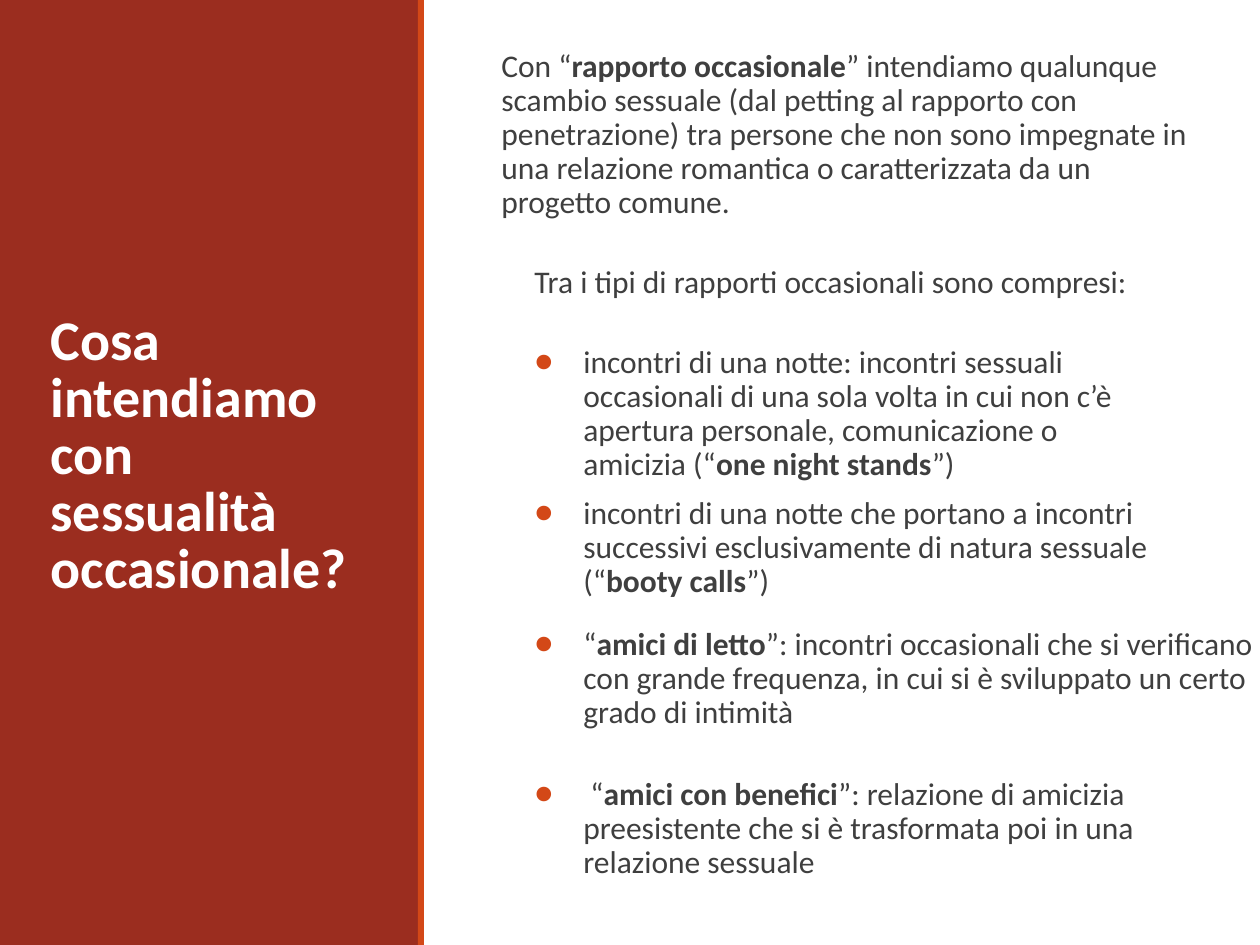
from dataclasses import dataclass

import pptx
import pptx.dml.color
import pptx.enum.shapes
import pptx.enum.text
import pptx.oxml
import pptx.oxml.ns
import pptx.util

PX = 914400 // 126
FONT = "Calibri"
COLORS = {"background": "FFFFFF", "panel": "9B2D1F", "accent": "D34817",
          "text": "3F3F3F", "title": "FFFFFF"}
INDENT, BULLET_INDENT, HANGING = 14, 63, 49
LINE_HEIGHT, INSET = 34, 6


@dataclass
class Bar:
    left: int
    width: int
    color: str


@dataclass
class TextBlock:
    """One paragraph; bold marks the position of the bold run."""
    left: int
    top: int
    width: int
    lines: int
    runs: list[str]
    bold: int | None = 1
    bullet: bool = True


BARS = [Bar(0, 1260, "background"), Bar(0, 418, "panel"), Bar(418, 6, "accent")]

BLOCKS = [
    TextBlock(475, 44, 727, 5, [
        "Con “", "rapporto occasionale",
        "” intendiamo qualunque scambio sessuale (dal petting al rapporto con "
        "penetrazione) tra persone che non sono impegnate in una relazione "
        "romantica o caratterizzata da un progetto comune."], bullet=False),
    TextBlock(508, 260, 689, 1, [
        "Tra i tipi di rapporti occasionali sono compresi:"], bold=None, bullet=False),
    TextBlock(508, 340, 663, 4, [
        "incontri di una notte: incontri sessuali occasionali di una sola volta in "
        "cui non c’è apertura personale, comunicazione o amicizia (“",
        "one night stands", "”)"]),
    TextBlock(508, 491, 663, 3, [
        "incontri di una notte che portano a incontri successivi esclusivamente "
        "di natura sessuale (“", "booty calls", "”)"]),
    TextBlock(508, 622, 779, 3, [
        "“", "amici di letto",
        "”: incontri occasionali che si verificano con grande frequenza, in cui si "
        "è sviluppato un certo grado di intimità"]),
    TextBlock(508, 772, 736, 3, [
        " “", "amici con benefici",
        "”: relazione di amicizia preesistente che si è trasformata poi in una "
        "relazione sessuale"]),
]


def px(n: int) -> pptx.util.Emu:
    return pptx.util.Emu(n * PX)


def rgb(name: str) -> pptx.dml.color.RGBColor:
    return pptx.dml.color.RGBColor.from_string(COLORS[name])


def add_bar(slide, bar: Bar) -> None:
    sp = slide.shapes.add_shape(pptx.enum.shapes.MSO_SHAPE.RECTANGLE,
                                px(bar.left), 0, px(bar.width), px(945))
    sp.shadow.inherit = False
    sp.fill.solid()
    sp.fill.fore_color.rgb = rgb(bar.color)
    sp.line.fill.background()


def add_run(p, text: str, size: int, color: str, bold: bool) -> None:
    r = p.add_run()
    r.text = text
    r.font.name = FONT
    r.font.size = pptx.util.Pt(size)
    r.font.bold = bold
    r.font.color.rgb = rgb(color)


def set_indent(p, bullet: bool) -> None:
    pPr = p._p.get_or_add_pPr()
    pPr.set("marL", str(px(BULLET_INDENT if bullet else INDENT)))
    pPr.set("indent", str(px(-HANGING if bullet else 0)))
    if bullet:
        ns = pptx.oxml.ns.nsdecls("a")
        for xml in (
            f'<a:buClr {ns}><a:srgbClr val="{COLORS["accent"]}"/></a:buClr>',
            f'<a:buFont {ns} typeface="{FONT}"/>',
            f'<a:buChar {ns} char="●"/>',
        ):
            pPr.append(pptx.oxml.parse_xml(xml))


def add_text(slide, block: TextBlock) -> None:
    height = block.lines * LINE_HEIGHT + 2 * INSET
    sp = slide.shapes.add_textbox(px(block.left), px(block.top),
                                  px(block.width), px(height))
    tf = sp.text_frame
    tf.word_wrap = True
    tf.margin_top = tf.margin_bottom = px(INSET)
    tf.vertical_anchor = pptx.enum.text.MSO_ANCHOR.TOP
    p = tf.paragraphs[0]
    p.line_spacing = 0.9
    set_indent(p, block.bullet)
    for i, text in enumerate(block.runs):
        add_run(p, text, 18, "text", i == block.bold)


def format_title(slide, text: str) -> None:
    sp = slide.shapes.title
    sp.left, sp.top, sp.width, sp.height = px(38), px(69), px(341), px(777)
    slide.shapes._spTree.append(sp._element)  # above the panel
    tf = sp.text_frame
    tf.word_wrap = True
    tf.auto_size = pptx.enum.text.MSO_AUTO_SIZE.NONE
    tf.vertical_anchor = pptx.enum.text.MSO_ANCHOR.MIDDLE
    p = tf.paragraphs[0]
    p.alignment = pptx.enum.text.PP_ALIGN.LEFT
    p.line_spacing = 0.85
    add_run(p, text, 32, "title", True)


def main() -> None:
    prs = pptx.Presentation()
    prs.slide_width, prs.slide_height = pptx.util.Inches(10), pptx.util.Inches(7.5)
    slide = prs.slides.add_slide(prs.slide_layouts[5])
    for bar in BARS:
        add_bar(slide, bar)
    format_title(slide, "Cosa intendiamo con sessualità occasionale?")
    for block in BLOCKS:
        add_text(slide, block)
    prs.save("out.pptx")


if __name__ == "__main__":
    main()
